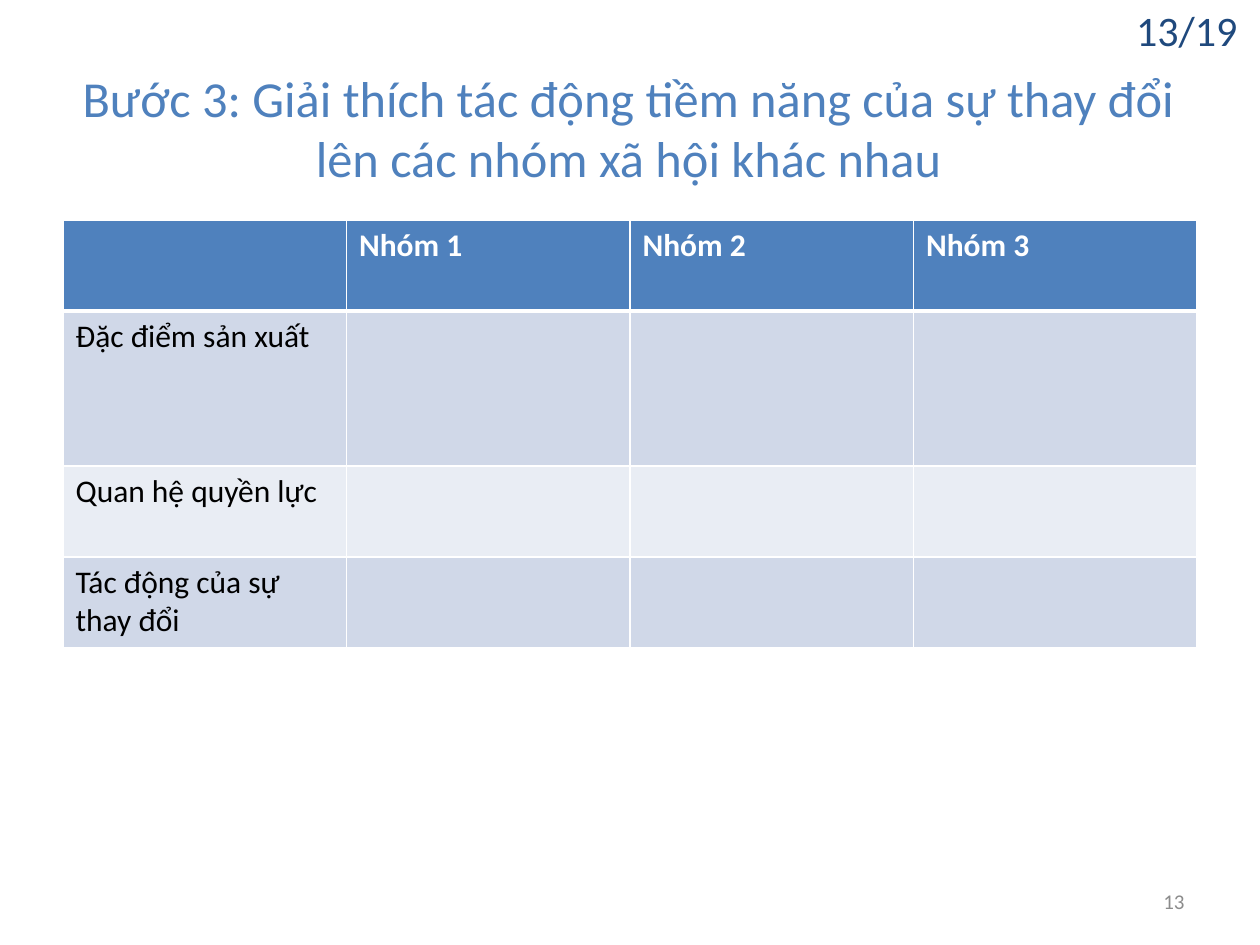
from lxml import etree
from pptx import Presentation
from pptx.dml.color import RGBColor
from pptx.enum.text import MSO_ANCHOR, MSO_AUTO_SIZE, PP_ALIGN
from pptx.oxml.ns import qn
from pptx.util import Inches, Pt

MIDDLE, BOTTOM = MSO_ANCHOR.MIDDLE, MSO_ANCHOR.BOTTOM
CENTER, RIGHT = PP_ALIGN.CENTER, PP_ALIGN.RIGHT
NO_AUTOFIT = MSO_AUTO_SIZE.NONE
FONT = "Calibri"
COLORS = {
    "accent": "4F81BD", "navy": "1F497D", "grey": "8C8C8C", "black": "000000",
    "white": "FFFFFF", "band_dark": "D0D8E8", "band_light": "E9EDF4",
}
TITLE = "Bước 3: Giải thích tác động tiềm năng của sự thay đổi lên các nhóm xã hội khác nhau"
LABELS = [
    ("13", (7.17, 6.95, 2.33, 0.4), 12, "grey"),
    ("13/19", (8.59, -0.03, 1.33, 0.53), 24, "navy"),
]
GROUPS = ["", "Nhóm 1", "Nhóm 2", "Nhóm 3"]
CRITERIA = ["Đặc điểm sản xuất", "Quan hệ quyền lực", "Tác động của sự thay đổi"]
ROW_HEIGHTS = [0.72, 1.23, 0.72, 0.72]
COLUMN_WIDTH = 2.25


def rgb(name):
    return RGBColor.from_string(COLORS[name])


def write(frame, text, size, color, align=None, bold=False):
    frame.text = text
    for paragraph in frame.paragraphs:
        paragraph.alignment = align
        for run in paragraph.runs:
            run.font.name = FONT
            run.font.size = Pt(size)
            run.font.bold = bold
            run.font.color.rgb = rgb(color)


def place(shape, box):
    shape.left, shape.top, shape.width, shape.height = map(Inches, box)


def add_borders(cell, widths):
    properties = cell._tc.get_or_add_tcPr()
    for index, (side, width) in enumerate(widths.items()):
        line = etree.Element(qn(f"a:ln{side}"), w=str(Pt(width)))
        fill = etree.SubElement(line, qn("a:solidFill"))
        etree.SubElement(fill, qn("a:srgbClr"), val=COLORS["white"])
        properties.insert(index, line)


def add_title(slide):
    title = slide.shapes.title
    place(title, (0.49, 0.68, 9, 1.07))
    frame = title.text_frame
    write(frame, TITLE, 28.8, "accent", CENTER)
    frame.word_wrap = True
    frame.auto_size = NO_AUTOFIT
    frame.vertical_anchor = BOTTOM
    frame.margin_top, frame.margin_bottom = 0, Inches(0.26)


def add_label(slide, text, box, size, color):
    frame = slide.shapes.add_textbox(*map(Inches, box)).text_frame
    frame.word_wrap = True
    frame.vertical_anchor = MIDDLE
    write(frame, text, size, color, RIGHT)


def add_impact_table(slide):
    rows = [GROUPS] + [[name] + [""] * (len(GROUPS) - 1) for name in CRITERIA]
    size = COLUMN_WIDTH * len(GROUPS), sum(ROW_HEIGHTS)
    table = slide.shapes.add_table(
        len(rows), len(GROUPS), *map(Inches, (0.5, 1.75, *size))).table
    for column in table.columns:
        column.width = Inches(COLUMN_WIDTH)
    for r, (texts, height) in enumerate(zip(rows, ROW_HEIGHTS)):
        table.rows[r].height = Inches(height)
        header = r == 0
        fill = "accent" if header else "band_dark" if r % 2 else "band_light"
        for c, text in enumerate(texts):
            cell = table.cell(r, c)
            write(cell.text_frame, text, 18, "white" if header else "black", bold=header)
            cell.fill.solid()
            cell.fill.fore_color.rgb = rgb(fill)
            add_borders(cell, {"L": 1, "R": 1, "T": 3 if r == 1 else 1, "B": 3 if header else 1})


def main():
    """Build the slide on how a change affects social groups."""
    deck = Presentation()
    deck.slide_width, deck.slide_height = Inches(10), Inches(7.5)
    slide = deck.slides.add_slide(deck.slide_layouts[5])
    add_title(slide)
    for label in LABELS:
        add_label(slide, *label)
    add_impact_table(slide)
    deck.save("out.pptx")


if __name__ == "__main__":
    main()
